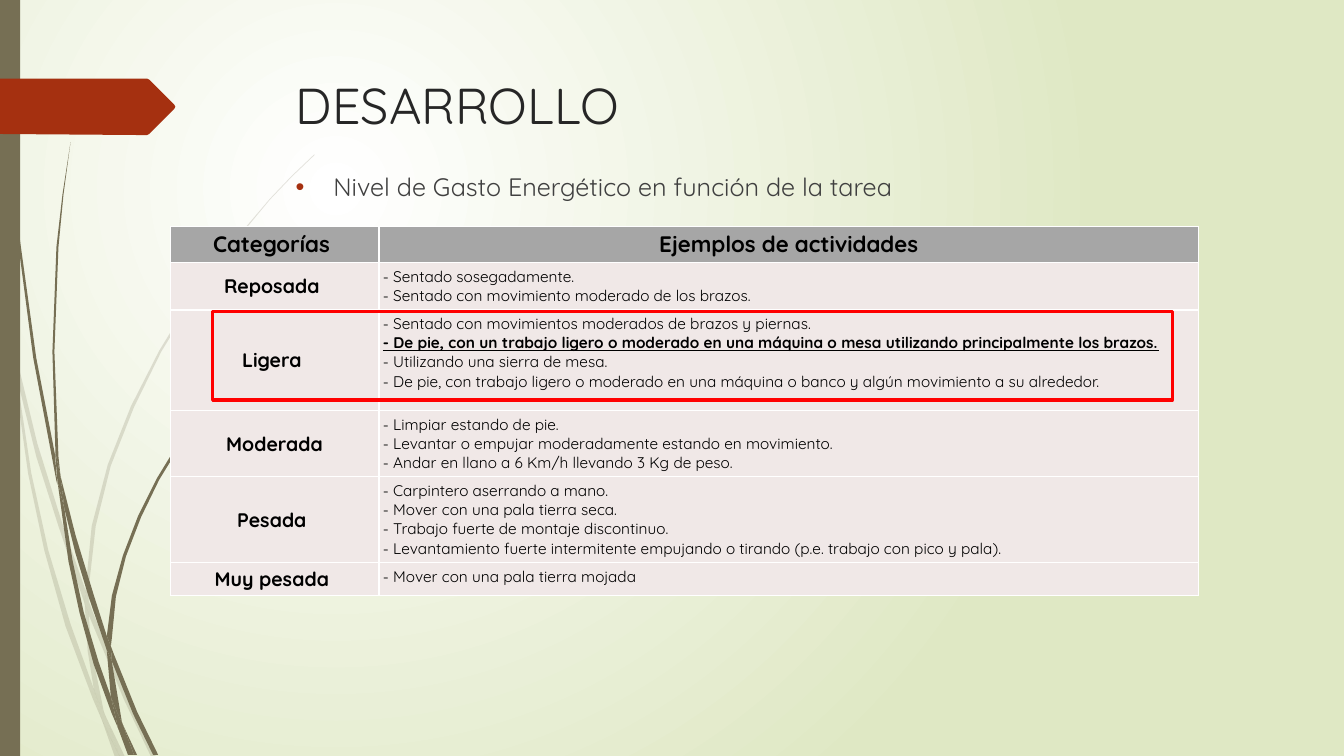
from lxml import etree
from pptx import Presentation
from pptx.dml.color import RGBColor
from pptx.enum.shapes import MSO_SHAPE
from pptx.enum.text import MSO_ANCHOR, PP_ALIGN
from pptx.oxml import parse_xml
from pptx.oxml.ns import nsdecls, qn
from pptx.util import Cm, Pt

RECT = MSO_SHAPE.RECTANGLE
LEFT, CENTER = PP_ALIGN.LEFT, PP_ALIGN.CENTER
TOP, MIDDLE = MSO_ANCHOR.TOP, MSO_ANCHOR.MIDDLE


class Theme:
    font = "Quicksand"
    glow, leaf = "FFFFFF", "DFE8C4"
    reed, arrow, highlight = "766F54", "A53010", "FF0000"
    title, body, cell_text = "262626", "404040", "000000"
    header, row, border = "A6A6A6", "F0E8E7", "FFFFFF"
    title_size, body_size = 36, 18
    header_size, category_size, activity_size = 16, 14, 11


def write(tf, *lines, size, color, bold=False, align=LEFT, marked=None):
    """Put one paragraph per line; the marked line is bold and underlined."""
    tf.word_wrap = True
    for i, line in enumerate(lines):
        p = tf.paragraphs[0] if i == 0 else tf.add_paragraph()
        p.alignment = align
        r = p.add_run()
        r.text = line
        r.font.name, r.font.size = Theme.font, Pt(size)
        r.font.color.rgb = RGBColor.from_string(color)
        r.font.bold = bold or i == marked
        r.font.underline = i == marked


def draw_outline(points, color, alpha=None):
    """Fill a closed outline whose points are in units of 2.54 cm."""
    start, *rest = [(round(x * 100), round(y * 100)) for x, y in points]
    builder = s.shapes.build_freeform(*start, scale=Cm(2.54) / 100)
    builder.add_line_segments(rest, close=True)
    sp = builder.convert_to_shape()
    sp.shadow.inherit = False
    sp.line.fill.background()
    sp.fill.solid()
    sp.fill.fore_color.rgb = RGBColor.from_string(color)
    if alpha:
        clr = sp._element.spPr.find(qn("a:solidFill"))[0]
        etree.SubElement(clr, qn("a:alpha"), val=str(alpha * 1000))


prs = Presentation()
prs.slide_width, prs.slide_height = Cm(33.87), Cm(19.05)
s = prs.slides.add_slide(prs.slide_layouts[6])

# Background: round glow in the upper left
fill = s.background.fill
fill.gradient()
for stop, color in zip(fill.gradient_stops, (Theme.glow, Theme.leaf)):
    stop.color.rgb = RGBColor.from_string(color)
grad = s.background._cSld.find(".//" + qn("a:gradFill"))
grad.replace(grad.find(qn("a:lin")), parse_xml(
    f'<a:path {nsdecls("a")} path="circle">'
    '<a:fillToRect l="50000" t="50000" r="100000" b="100000"/></a:path>'))

# Reeds
PALE_REEDS = [
    [(0.11, 3.5), (0.09, 3.22), (0, 2.82), (0, 2.99), (0.1, 3.44)],
    [(0.58, 5.22), (0.84, 5.99), (0.85, 5.86), (0.62, 5.2), (0.37, 4.4), (0.14, 3.45),
     (0.17, 3.76), (0.36, 4.53)],
    [(0.92, 6.07), (0.88, 5.96), (0.88, 6.1), (1.23, 6.94), (1.5, 7.51), (1.55, 7.51),
     (1.27, 6.92)],
    [(1.19, 7.51), (1.24, 7.51), (1.05, 7.11)],
    [(0.93, 6.83), (0.7, 6.19), (0.48, 5.46), (0.31, 4.69), (0.17, 3.76), (0.11, 3.5),
     (0.28, 4.7), (0.44, 5.46), (0.65, 6.21), (0.92, 6.93), (1.01, 7.14), (0.99, 7.07)],
    [(0.84, 5.99), (0.87, 6.46), (0.93, 6.83), (0.96, 6.92), (1.05, 7.11), (1.03, 7.06),
     (0.91, 6.46), (0.88, 6.1), (0.88, 6.08)],
    [(0.88, 5.84), (0.95, 5.22), (1.1, 4.62), (1.33, 4.04), (1.6, 3.49), (1.93, 2.95),
     (2.29, 2.45), (2.68, 1.98), (2.9, 1.75), (3.12, 1.54), (3.12, 1.53), (2.89, 1.75),
     (2.68, 1.97), (2.28, 2.44), (1.91, 2.94), (1.58, 3.48), (1.3, 4.03), (1.07, 4.61),
     (0.91, 5.22), (0.85, 5.84), (0.85, 5.86), (0.88, 5.96)],
    [(1.01, 7.14), (1.14, 7.51), (1.19, 7.51)],
    [(0.88, 6.08), (0.88, 6.1), (0.88, 5.96), (0.85, 5.86), (0.84, 5.99)],
    [(0.96, 6.92), (0.93, 6.83), (0.99, 7.07), (1.01, 7.14), (1.19, 7.51), (1.05, 7.11)],
]
DARK_REEDS = [
    [(0.07, 1.1), (0.17, 2.33), (0.33, 3.55), (0.56, 4.77), (0.57, 4.81), (0.55, 4.57),
     (0.55, 4.53), (0.36, 3.55), (0.19, 2.32), (0.08, 1.09), (0.05, 0.48), (0.04, 0),
     (0.03, 0), (0.04, 0.48)],
    [(0.88, 5.92), (1.06, 6.45), (1.06, 6.31), (0.93, 5.9), (0.75, 5.31), (0.6, 4.72),
     (0.64, 5.05), (0.75, 5.49)],
    [(1.13, 6.49), (1.1, 6.41), (1.11, 6.56), (1.32, 7.08), (1.52, 7.49), (1.57, 7.49),
     (1.36, 7.06)],
    [(1.1, 6.91), (0.98, 6.57), (0.83, 6.07), (0.72, 5.56), (0.64, 5.05), (0.57, 4.77),
     (0.68, 5.57), (0.79, 6.08), (0.93, 6.59), (1.11, 7.08), (1.17, 7.22), (1.16, 7.17)],
    [(0.6, 4.72), (0.58, 4.53), (0.54, 3.49), (0.58, 2.45), (0.63, 1.93), (0.7, 1.41),
     (0.62, 1.93), (0.56, 2.45), (0.52, 3.49), (0.55, 4.49)],
    [(1.33, 7.49), (1.36, 7.49), (1.22, 7.19)],
    [(0.57, 4.77), (0.64, 5.05), (0.6, 4.72), (0.55, 4.49), (0.55, 4.53)],
    [(1.11, 6.33), (1.15, 5.92), (1.25, 5.52), (1.4, 5.13), (1.58, 4.76), (1.8, 4.4),
     (2.05, 4.06), (2.31, 3.74), (2.45, 3.59), (2.61, 3.44), (2.6, 3.44), (2.45, 3.58),
     (2.31, 3.73), (2.04, 4.05), (1.78, 4.38), (1.56, 4.74), (1.37, 5.12), (1.22, 5.51),
     (1.11, 5.91), (1.06, 6.31), (1.1, 6.41)],
    [(1.17, 7.22), (1.27, 7.49), (1.31, 7.49)],
    [(1.06, 6.45), (1.1, 6.91), (1.16, 7.06), (1.22, 7.19), (1.21, 7.16), (1.11, 6.56),
     (1.09, 6.51)],
    [(1.06, 6.45), (1.09, 6.51), (1.11, 6.56), (1.1, 6.41), (1.06, 6.31)],
    [(1.16, 7.06), (1.1, 6.91), (1.16, 7.17), (1.17, 7.22), (1.3, 7.49), (1.33, 7.49),
     (1.22, 7.19)],
]
for reeds, alpha in ((PALE_REEDS, 20), (DARK_REEDS, None)):
    for reed in reeds:
        draw_outline(reed, Theme.reed, alpha)

# Side bar and arrow
bar = s.shapes.add_shape(RECT, 0, 0, Cm(0.51), prs.slide_height)
bar.shadow.inherit = False
bar.fill.solid()
bar.fill.fore_color.rgb = RGBColor.from_string(Theme.reed)
bar.line.fill.background()
draw_outline([(0, 0.78), (1.46, 0.78), (1.48, 0.79), (1.73, 1.04), (1.74, 1.06),
              (1.73, 1.08), (1.48, 1.33), (1.46, 1.34), (1.36, 1.34), (0, 1.33)],
             Theme.arrow)

# Title and bullet
title = s.shapes.add_textbox(Cm(7.21), Cm(1.75), Cm(24.77), Cm(3.56))
write(title.text_frame, "DESARROLLO", size=Theme.title_size, color=Theme.title)
body = s.shapes.add_textbox(Cm(7.2), Cm(4.2), Cm(24.77), Cm(10.49))
write(body.text_frame, "Nivel de Gasto Energético en función de la tarea",
      size=Theme.body_size, color=Theme.body)
pPr = body.text_frame.paragraphs[0]._p.get_or_add_pPr()
pPr.set("marL", str(Cm(0.95)))
pPr.set("indent", str(-Cm(0.95)))
etree.SubElement(etree.SubElement(pPr, qn("a:buClr")), qn("a:srgbClr"), val=Theme.arrow)
etree.SubElement(pPr, qn("a:buFont"), typeface="Arial")
etree.SubElement(pPr, qn("a:buChar"), char="•")

# Table: category, activities, row height in cm
HEADER = ("Categorías ", ["Ejemplos de actividades"], 0.91)
ROWS = [
    ("Reposada ", ["- Sentado sosegadamente.",
                   "- Sentado con movimiento moderado de los brazos."], 1.19),
    ("Ligera ", ["- Sentado con movimientos moderados de brazos y piernas.",
                 "- De pie, con un trabajo ligero o moderado en una máquina o mesa "
                 "utilizando principalmente los brazos.",
                 "- Utilizando una sierra de mesa.",
                 "- De pie, con trabajo ligero o moderado en una máquina o banco y "
                 "algún movimiento a su alrededor."], 2.54),
    ("Moderada", ["- Limpiar estando de pie.",
                  "- Levantar o empujar moderadamente estando en movimiento.",
                  "- Andar en llano a 6 Km/h llevando 3 Kg de peso."], 1.66),
    ("Pesada ", ["- Carpintero aserrando a mano.",
                 "- Mover con una pala tierra seca.",
                 "- Trabajo fuerte de montaje discontinuo.",
                 "- Levantamiento fuerte intermitente empujando o tirando "
                 "(p.e. trabajo con pico y pala)."], 2.17),
    ("Muy pesada ", ["- Mover con una pala tierra mojada"], 0.83),
]
table_height = sum(height for *_, height in [HEADER, *ROWS])
table = s.shapes.add_table(len(ROWS) + 1, 2, Cm(4.29), Cm(5.71),
                           Cm(25.91), Cm(table_height)).table
table.horz_banding = False
table.columns[0].width, table.columns[1].width = Cm(5.26), Cm(20.65)
for i, (category, activities, height) in enumerate([HEADER, *ROWS]):
    table.rows[i].height = Cm(height)
    is_header = i == 0
    for j, lines in enumerate(([category], activities)):
        cell = table.cell(i, j)
        heading = is_header or j == 0
        size = (Theme.header_size if is_header else
                Theme.category_size if heading else Theme.activity_size)
        write(cell.text_frame, *lines, size=size, color=Theme.cell_text, bold=heading,
              align=CENTER if heading else LEFT,
              marked=1 if category == "Ligera " and j == 1 else None)
        cell.vertical_anchor = MIDDLE if heading and not is_header else TOP
        cell.margin_left = cell.margin_right = Cm(0.1)
        cell.margin_top = cell.margin_bottom = Cm(0.1)
        tcPr = cell._tc.get_or_add_tcPr()
        for side in ("lnL", "lnR", "lnT", "lnB"):
            ln = etree.SubElement(tcPr, qn(f"a:{side}"), w=str(Pt(1)))
            line_fill = etree.SubElement(ln, qn("a:solidFill"))
            etree.SubElement(line_fill, qn("a:srgbClr"), val=Theme.border)
        cell.fill.solid()
        cell.fill.fore_color.rgb = RGBColor.from_string(
            Theme.header if is_header else Theme.row)

# Frame around the light-work row
frame = s.shapes.add_shape(RECT, Cm(5.36), Cm(7.85), Cm(24.19), Cm(2.23))
frame.shadow.inherit = False
frame.fill.background()
frame.line.color.rgb = RGBColor.from_string(Theme.highlight)
frame.line.width = Pt(2.25)

prs.save("out.pptx")
